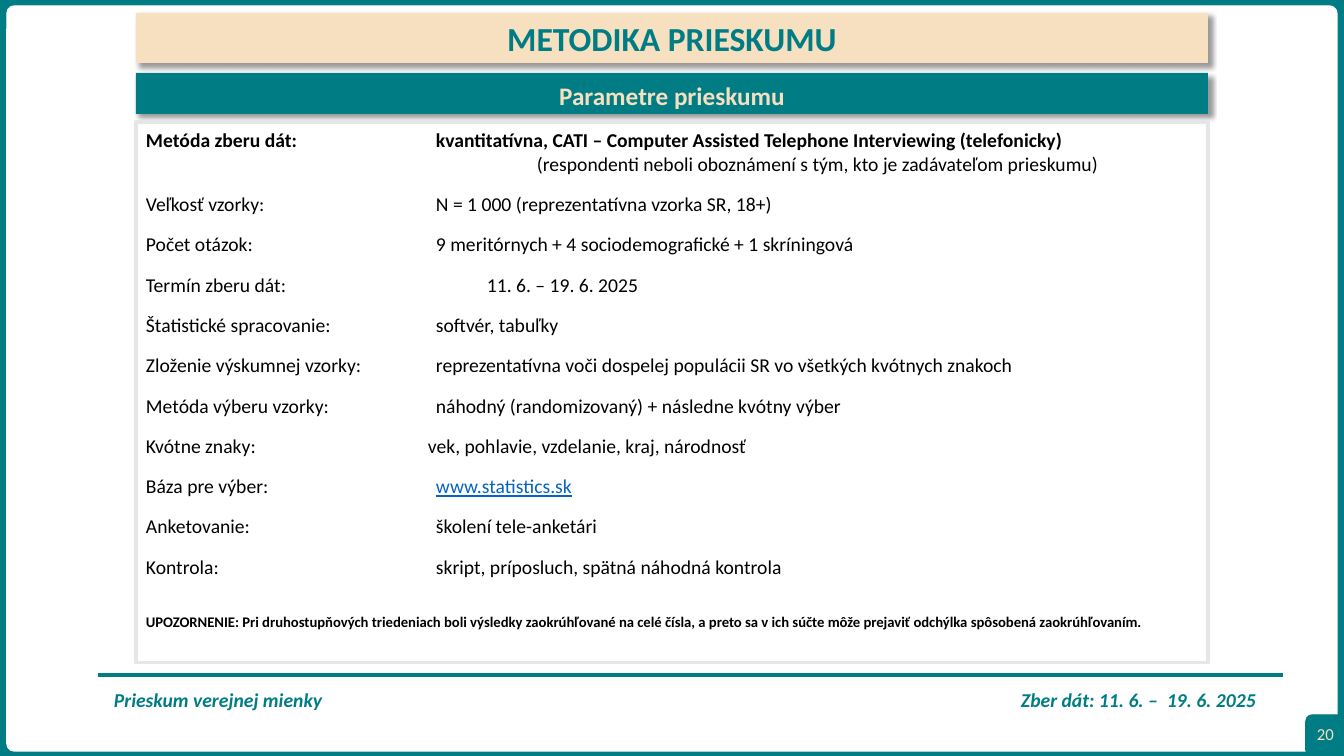
from lxml.etree import SubElement
from pptx import Presentation
from pptx.dml.color import RGBColor
from pptx.enum.shapes import MSO_CONNECTOR, MSO_SHAPE
from pptx.enum.text import MSO_ANCHOR, PP_ALIGN
from pptx.oxml.ns import qn
from pptx.util import Emu, Pt

# Content
TITLE = "METODIKA PRIESKUMU"
SUBTITLE = "Parametre prieskumu"
VALUE_X = 290
# label, value, offset of the value from the text edge in px
PARAMETERS = [
    ("Metóda zberu dát:", "kvantitatívna, CATI – Computer Assisted Telephone Interviewing (telefonicky)", VALUE_X),
    ("", "(respondenti neboli oboznámení s tým, kto je zadávateľom prieskumu)", 391),
    ("Veľkosť vzorky:", "N = 1 000 (reprezentatívna vzorka SR, 18+)", VALUE_X),
    ("Počet otázok:", "9 meritórnych + 4 sociodemografické + 1 skríningová", VALUE_X),
    ("Termín zberu dát:", "11. 6. – 19. 6. 2025", 341),
    ("Štatistické spracovanie:", "softvér, tabuľky", VALUE_X),
    ("Zloženie výskumnej vzorky:", "reprezentatívna voči dospelej populácii SR vo všetkých kvótnych znakoch", VALUE_X),
    ("Metóda výberu vzorky:", "náhodný (randomizovaný) + následne kvótny výber", VALUE_X),
    ("Kvótne znaky:", "vek, pohlavie, vzdelanie, kraj, národnosť", 282),
    ("Báza pre výber:", "www.statistics.sk", VALUE_X),
    ("Anketovanie:", "školení tele-anketári", VALUE_X),
    ("Kontrola:", "skript, príposluch, spätná náhodná kontrola", VALUE_X),
]
WARNING = ("UPOZORNENIE: Pri druhostupňových triedeniach boli výsledky zaokrúhľované na celé čísla, "
           "a preto sa v ich súčte môže prejaviť odchýlka spôsobená zaokrúhľovaním.")
FOOTER = ("Prieskum verejnej mienky", "Zber dát: 11. 6. –  19. 6. 2025")
PAGE = "20"

TEAL = RGBColor(0x00, 0x7C, 0x85)
SAND = RGBColor(0xF6, 0xE0, 0xC0)
WHITE = RGBColor(0xFF, 0xFF, 0xFF)
BLACK = RGBColor(0x00, 0x00, 0x00)
GREY = RGBColor(0xE7, 0xE6, 0xE6)
LINK = RGBColor(0x05, 0x63, 0xC1)
FONT = "Calibri"
W, H = 1344, 756
LEFT, WIDTH = 136, 1072


def px(n):
    return Emu(round(n * 914400 / 100.8))


def add_box(kind, x, y, w, h, fill=None, line=None, width=1):
    sp = s.shapes.add_shape(kind, px(x), px(y), px(w), px(h))
    sp.shadow.inherit = False
    if fill is None:
        sp.fill.background()
    else:
        sp.fill.solid()
        sp.fill.fore_color.rgb = fill
    if line is None:
        sp.line.fill.background()
    else:
        sp.line.color.rgb = line
        sp.line.width = Pt(width)
    return sp


def add_text(x, y, w, h):
    tf = s.shapes.add_textbox(px(x), px(y), px(w), px(h)).text_frame
    tf.word_wrap = True
    return tf


def add_shadow(sp):
    effects = sp._element.spPr.find(qn("a:effectLst"))
    shadow = SubElement(effects, qn("a:outerShdw"), blurRad=str(Pt(4)), dist=str(Pt(3)),
                        dir="2700000", algn="tl", rotWithShape="0")
    color = SubElement(shadow, qn("a:srgbClr"), val="000000")
    SubElement(color, qn("a:alpha"), val="40000")


def add_tab(p, x):
    tabs = SubElement(p._p.get_or_add_pPr(), qn("a:tabLst"))
    SubElement(tabs, qn("a:tab"), pos=str(px(x)), algn="l")


def style(p, size, color, bold=False, italic=False):
    for r in p.runs:
        r.font.name, r.font.size = FONT, Pt(size)
        r.font.bold, r.font.italic = bold, italic
        r.font.color.rgb = color


prs = Presentation()
prs.slide_width, prs.slide_height = px(W), px(H)
s = prs.slides.add_slide(prs.slide_layouts[6])

# Teal frame around a white page
add_box(MSO_SHAPE.RECTANGLE, 0, 0, W, H, TEAL, TEAL)
page = add_box(MSO_SHAPE.ROUNDED_RECTANGLE, 7, 6, 1330, 745, WHITE, WHITE)
page.adjustments[0] = 0.01

# Footer, rule and page number
p = add_text(104, 689, 1186, 44).paragraphs[0]
p.text = "\t".join(FOOTER)
p.line_spacing = 0.7
add_tab(p, 907)
style(p, 14, TEAL, bold=True, italic=True)

add_box(MSO_SHAPE.ROUNDED_RECTANGLE, 1306, 715, 38, 41, TEAL, TEAL)
rule = s.shapes.add_connector(MSO_CONNECTOR.STRAIGHT, px(98), px(675), px(1283), px(675))
rule.line.color.rgb = TEAL
rule.line.width = Pt(3)
SubElement(rule._element.spPr, qn("a:effectLst"))

tf = add_text(1300, 714, 51, 40)
tf.vertical_anchor = MSO_ANCHOR.MIDDLE
p = tf.paragraphs[0]
p.text = PAGE
p.alignment = PP_ALIGN.CENTER
style(p, 12, SAND)

# Title bands
for text, y, h, fill, color, size, anchor, spacing in [
    (TITLE, 13, 50, SAND, TEAL, 24, MSO_ANCHOR.MIDDLE, 1.0),
    (SUBTITLE, 73, 41, TEAL, SAND, 18, MSO_ANCHOR.TOP, 1.07),
]:
    band = add_box(MSO_SHAPE.RECTANGLE, LEFT, y, WIDTH, h, fill)
    add_shadow(band)
    tf = band.text_frame
    tf.vertical_anchor = anchor
    p = tf.paragraphs[0]
    p.text = text
    p.alignment = PP_ALIGN.CENTER
    p.line_spacing = spacing
    style(p, size, color, bold=True)

# Survey parameters
tf = add_text(LEFT, 123, WIDTH, 518)
for i, (label, value, x) in enumerate(PARAMETERS):
    p = tf.paragraphs[0] if i == 0 else tf.add_paragraph()
    if label:
        p.text = label + "\t"
        add_tab(p, x)
    else:
        p._p.get_or_add_pPr().set("marL", str(px(x)))
    if i > 1:
        p.space_before = Pt(12)
    r = p.add_run()
    r.text = value
    style(p, 14, BLACK, bold=i == 0)
    if value.startswith("www."):
        r.font.color.rgb = LINK
        r.font.underline = True

p = tf.add_paragraph()
p.text = WARNING
p.space_before = Pt(25)
style(p, 10.5, BLACK, bold=True)

add_box(MSO_SHAPE.RECTANGLE, LEFT, 122, WIDTH, 541, line=GREY, width=2.25)

prs.save("out.pptx")
